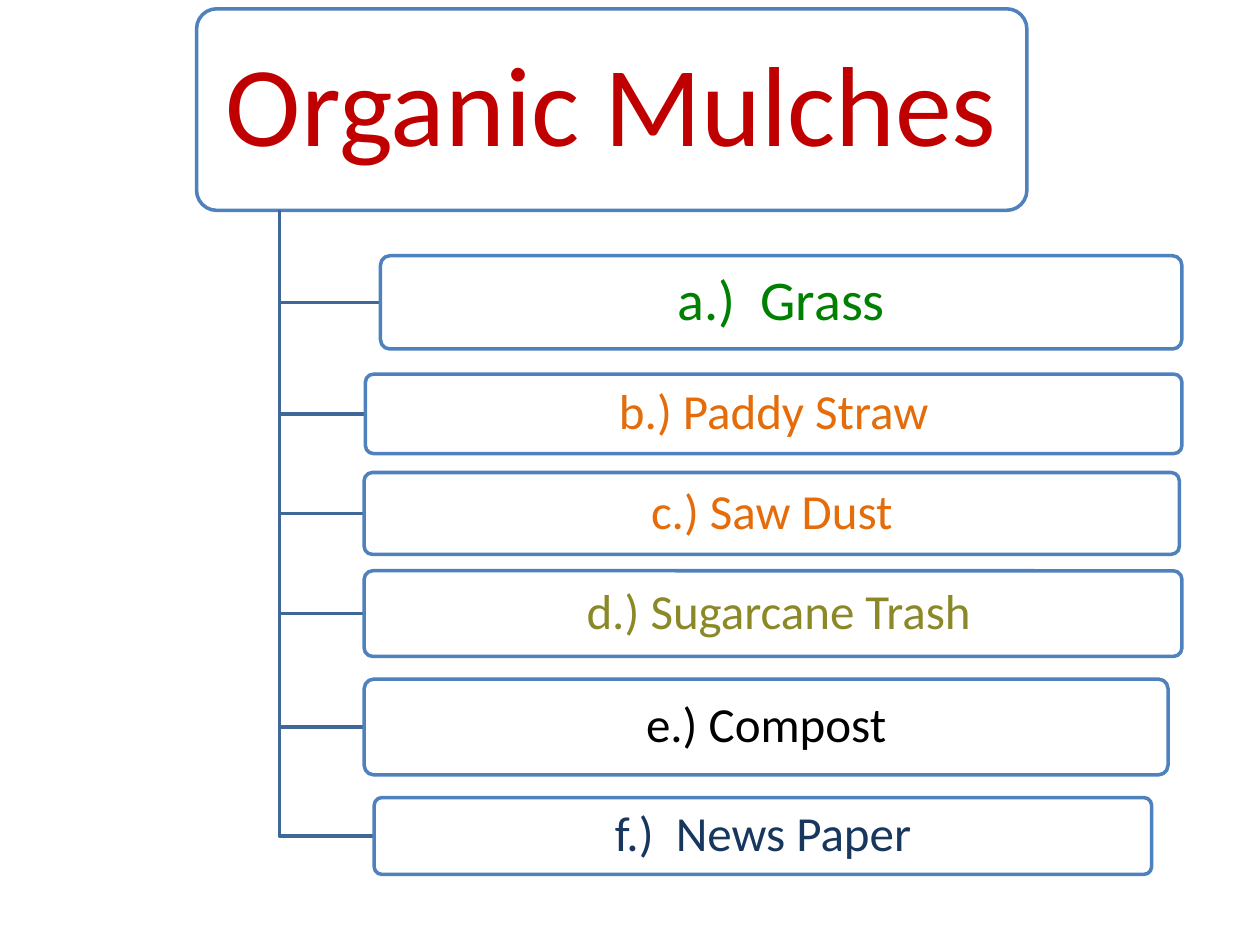
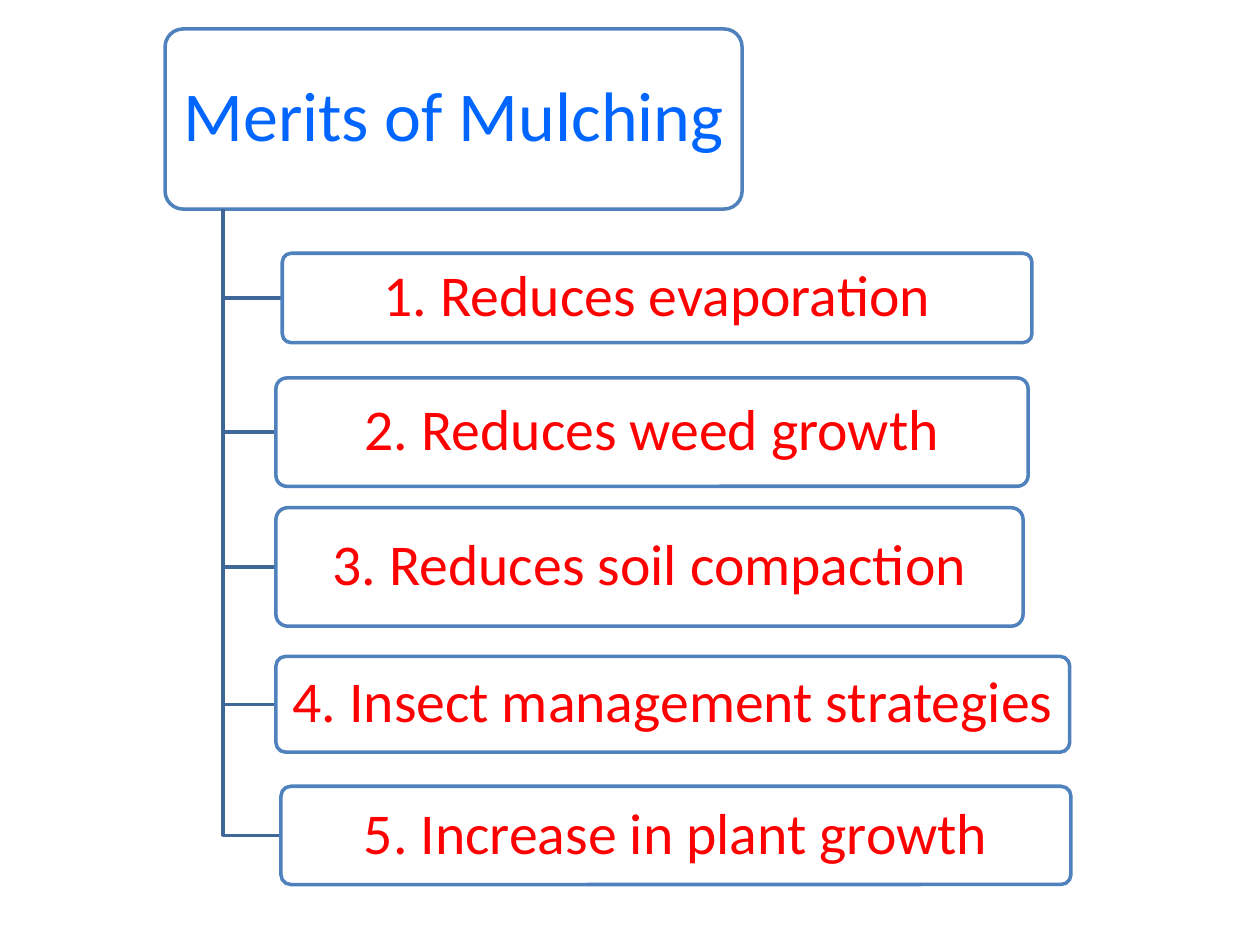
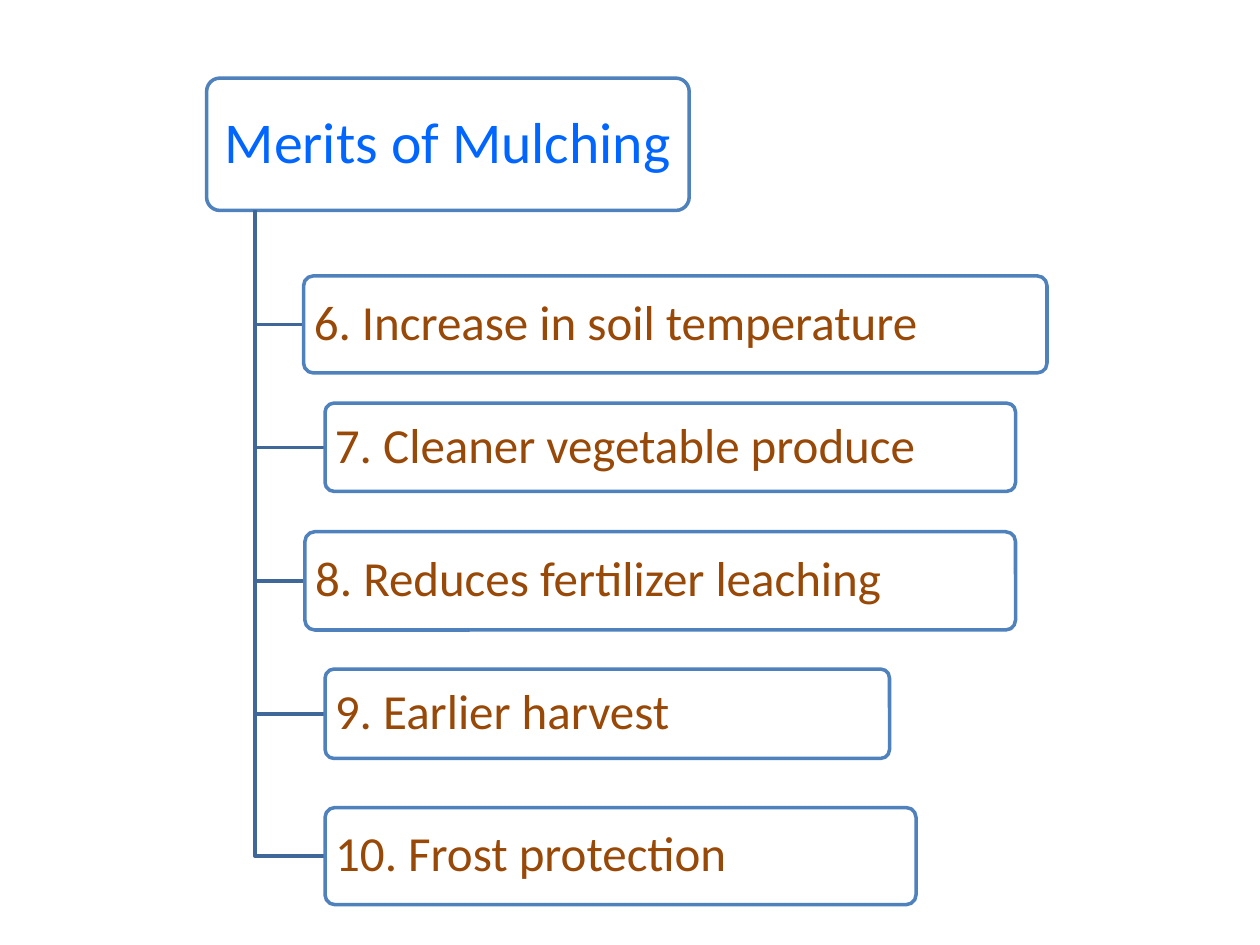
"""Build three hierarchy slides about mulching."""
import dataclasses

import lxml.etree
import pptx
import pptx.dml.color
import pptx.enum.shapes
import pptx.enum.text
import pptx.oxml.ns
import pptx.util

RGBColor = pptx.dml.color.RGBColor
Align = pptx.enum.text.PP_ALIGN

WHITE = RGBColor(0xFF, 0xFF, 0xFF)
BLACK = RGBColor(0x00, 0x00, 0x00)
BOX_LINE = RGBColor(0x4F, 0x81, 0xBD)
LINK_LINE = RGBColor(0x3F, 0x67, 0x97)
DARK_RED = RGBColor(0xC0, 0x00, 0x00)
RED = RGBColor(0xFF, 0x00, 0x00)
GREEN = RGBColor(0x00, 0x80, 0x00)
ORANGE = RGBColor(0xE4, 0x6C, 0x0A)
OLIVE = RGBColor(0x8B, 0x89, 0x27)
NAVY = RGBColor(0x17, 0x37, 0x5E)
BLUE = RGBColor(0x00, 0x66, 0xFF)
BROWN = RGBColor(0x98, 0x48, 0x07)

SLIDE_WIDTH = pptx.util.Inches(10)
SLIDE_HEIGHT = pptx.util.Inches(7.5)
GRID_COLUMNS, GRID_ROWS = 100, 75
FONT = "Calibri"
LINE_WIDTH = pptx.util.Pt(2)
CORNER = 0.1
TRUNK_SHARE = 0.1
SIDE_INSET, TOP_INSET = 0.15, 0.1
BRANCH_OPACITY = 90


@dataclasses.dataclass
class Box:
    """A labelled box placed in grid columns and rows."""
    text: str
    left: float
    top: float
    width: float
    height: float
    color: RGBColor
    size: float
    align: Align = Align.CENTER


def columns(count):
    """Return the length of a number of grid columns."""
    return round(SLIDE_WIDTH * count / GRID_COLUMNS)


def rows(count):
    """Return the length of a number of grid rows."""
    return round(SLIDE_HEIGHT * count / GRID_ROWS)


def set_opacity(shape, percent):
    """Make the solid fill of a shape partly transparent."""
    color = shape.fill._xPr.find(".//" + pptx.oxml.ns.qn("a:srgbClr"))
    alpha = lxml.etree.SubElement(color, pptx.oxml.ns.qn("a:alpha"))
    alpha.set("val", str(percent * 1000))


def write_label(shape, box):
    """Write the text of a box, with margins in proportion to its size."""
    size = pptx.util.Pt(box.size)
    frame = shape.text_frame
    frame.word_wrap = True
    frame.vertical_anchor = pptx.enum.text.MSO_ANCHOR.MIDDLE
    frame.margin_left = frame.margin_right = round(size * SIDE_INSET)
    frame.margin_top = frame.margin_bottom = round(size * TOP_INSET)
    paragraph = frame.paragraphs[0]
    paragraph.text = box.text
    paragraph.alignment = box.align
    paragraph.line_spacing = 0.9
    paragraph.font.name = FONT
    paragraph.font.size = size
    paragraph.font.color.rgb = box.color


def add_box(slide, box):
    """Add a white rounded box with its label."""
    shape = slide.shapes.add_shape(
        pptx.enum.shapes.MSO_SHAPE.ROUNDED_RECTANGLE,
        columns(box.left), rows(box.top), columns(box.width), rows(box.height))
    shape.adjustments[0] = CORNER
    shape.shadow.inherit = False
    shape.fill.solid()
    shape.fill.fore_color.rgb = WHITE
    shape.line.color.rgb = BOX_LINE
    shape.line.width = LINE_WIDTH
    write_label(shape, box)
    return shape


def add_link(slide, root, branch):
    """Add the elbow line that leads from the root down to a branch."""
    trunk = columns(root.left + root.width * TRUNK_SHARE)
    middle = rows(branch.top + branch.height / 2)
    builder = slide.shapes.build_freeform(trunk, rows(root.top + root.height))
    builder.add_line_segments(
        [(trunk, middle), (columns(branch.left), middle)], close=False)
    link = builder.convert_to_shape()
    link.shadow.inherit = False
    link.fill.background()
    link.line.color.rgb = LINK_LINE
    link.line.width = LINE_WIDTH


def add_hierarchy(presentation, root, branches):
    """Add a slide with a root box and its branches."""
    slide = presentation.slides.add_slide(presentation.slide_layouts[6])
    add_box(slide, root)
    for branch in branches:
        add_link(slide, root, branch)
        set_opacity(add_box(slide, branch), BRANCH_OPACITY)


def main():
    """Build and save the presentation."""
    presentation = pptx.Presentation()
    presentation.slide_width = SLIDE_WIDTH
    presentation.slide_height = SLIDE_HEIGHT

    add_hierarchy(
        presentation,
        Box("Organic Mulches", 15.6, 0.7, 65.9, 16, DARK_RED, 65),
        [Box("a.)  Grass", 30.2, 20.3, 63.6, 7.4, GREEN, 32),
         Box("b.) Paddy Straw", 29, 29.7, 64.8, 6.3, ORANGE, 28),
         Box("c.) Saw Dust", 28.9, 37.5, 64.7, 6.5, ORANGE, 28),
         Box(" d.) Sugarcane Trash", 28.9, 45.3, 64.9, 6.8, OLIVE, 28),
         Box("e.) Compost", 28.9, 53.9, 63.8, 7.6, BLACK, 28),
         Box("f.)  News Paper", 29.7, 63.3, 61.7, 6.1, NAVY, 28)])

    early_merits = [
        ("1. Reduces evaporation", 22.4, 20.1, 59.5, 7.1),
        ("2. Reduces weed growth", 21.9, 30, 59.7, 8.6),
        ("3. Reduces soil compaction", 21.9, 40.3, 59.3, 9.4),
        ("4. Insect management strategies", 21.9, 52.1, 63, 7.6),
        ("5. Increase in plant growth", 22.3, 62.4, 62.7, 7.8)]
    add_hierarchy(
        presentation,
        Box("Merits of Mulching", 13.1, 2.3, 45.8, 14.3, BLUE, 40),
        [Box(*merit, RED, 33) for merit in early_merits])

    later_merits = [
        ("6. Increase in soil temperature", 24.1, 21.9, 59, 7.7),
        ("7. Cleaner vegetable produce", 25.8, 32, 54.8, 7),
        ("8. Reduces fertilizer leaching", 24.2, 42.2, 56.4, 7.8),
        ("9. Earlier harvest", 25.8, 53.1, 44.8, 7.1),
        ("10. Frost protection", 25.8, 64.1, 46.9, 7.7)]
    add_hierarchy(
        presentation,
        Box("Merits of Mulching", 16.4, 6.2, 38.3, 10.5, BLUE, 33),
        [Box(*merit, BROWN, 28, Align.LEFT) for merit in later_merits])

    presentation.save("out.pptx")


if __name__ == "__main__":
    main()
